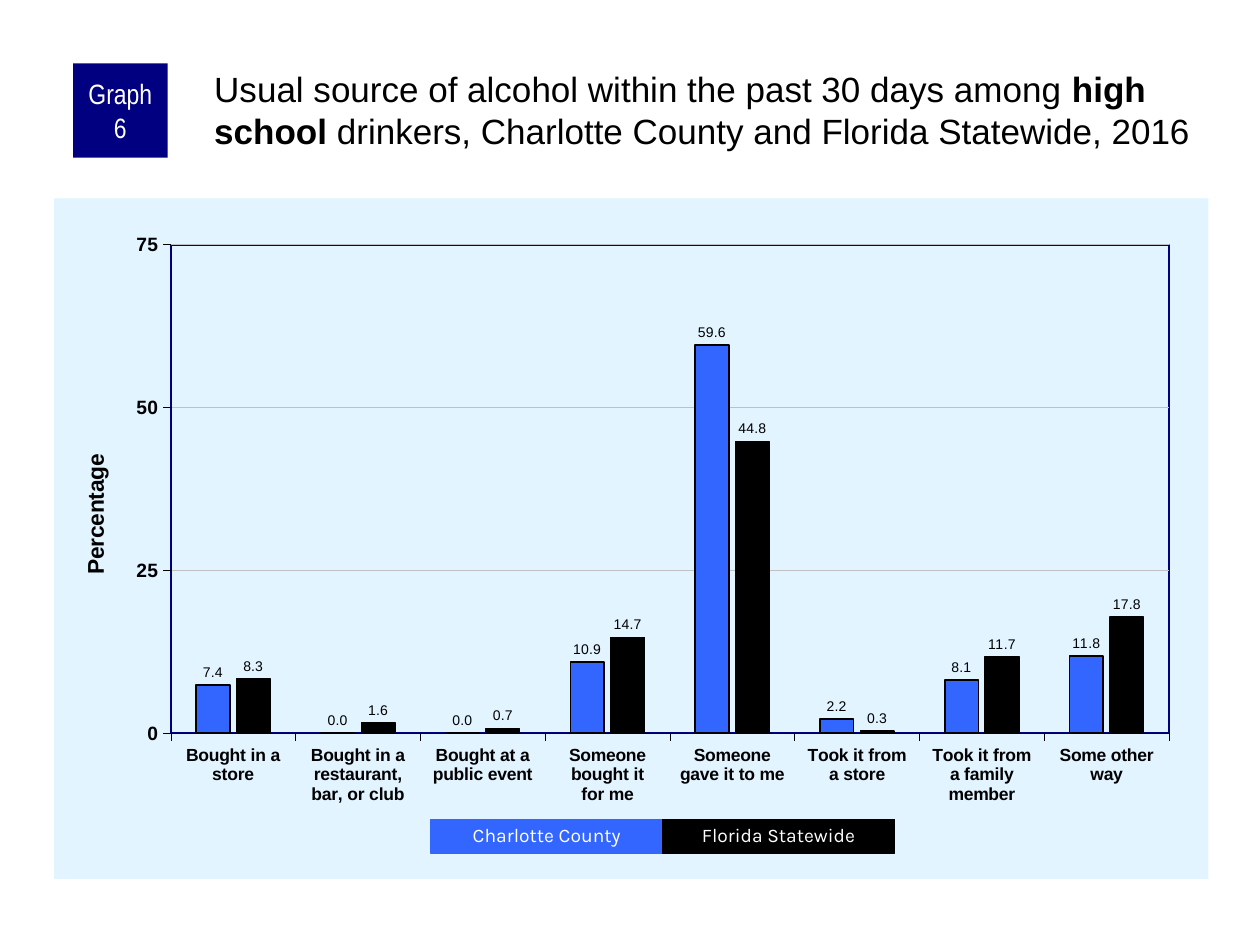
from dataclasses import dataclass
from lxml import etree
from pptx import Presentation
from pptx.chart.data import CategoryChartData
from pptx.dml.color import RGBColor
from pptx.enum.chart import XL_CHART_TYPE, XL_LABEL_POSITION, XL_TICK_MARK
from pptx.enum.shapes import MSO_SHAPE
from pptx.enum.text import MSO_ANCHOR, MSO_AUTO_SIZE, PP_ALIGN
from pptx.oxml import parse_xml
from pptx.util import Inches, Pt

COLUMN = XL_CHART_TYPE.COLUMN_CLUSTERED
OUTER = XL_LABEL_POSITION.OUTSIDE_END
TICK = XL_TICK_MARK.OUTSIDE
RECT = MSO_SHAPE.RECTANGLE
TOP = MSO_ANCHOR.TOP
MIDDLE = MSO_ANCHOR.MIDDLE
FIXED = MSO_AUTO_SIZE.NONE
GROW = MSO_AUTO_SIZE.SHAPE_TO_FIT_TEXT
LEFT = PP_ALIGN.LEFT
CENTER = PP_ALIGN.CENTER
WIDE, HIGH = Inches(10), Inches(7.5)
SPACE = "http://schemas.openxmlformats.org/drawingml/2006/chart"
DRAW = "http://schemas.openxmlformats.org/drawingml/2006/main"


@dataclass(frozen=True)
class Theme:
    body: str = "Arial"
    tight: str = "Arial Narrow"
    key: str = "Karla"
    navy: str = "000080"
    blue: str = "3366FF"
    black: str = "000000"
    white: str = "FFFFFF"
    pale: str = "E1F4FF"
    grid: str = "C0C0C0"
    head: float = 20
    badge: float = 16
    name: float = 13
    base: float = 11.5
    tick: float = 11
    cat: float = 10
    value: float = 8
    label: float = 11


@dataclass(frozen=True)
class Box:
    x: float
    y: float
    w: float
    h: float

    def place(self) -> tuple:
        return (round(self.x * WIDE), round(self.y * HIGH),
                round(self.w * WIDE), round(self.h * HIGH))


@dataclass(frozen=True)
class Group:
    name: str
    color: str
    edge: float
    values: tuple


LOOK = Theme()
GROUPS = (
    Group("Charlotte County", LOOK.blue, 1, (7.4, 0, 0, 10.9, 59.6, 2.2, 8.1, 11.8)),
    Group("Florida Statewide", LOOK.black, 0.75, (8.3, 1.6, 0.7, 14.7, 44.8, 0.3, 11.7, 17.8)),
)
SOURCES = (
    "Bought in a store", "Bought in a restaurant, bar, or club",
    "Bought at a public event", "Someone bought it\nfor me",
    "Someone\ngave it to me", "Took it from\na store",
    "Took it from\na family member", "Some other way",
)
HEAD = (
    ("Usual source of alcohol within the past 30 days among ", False),
    ("high school", True),
    (" drinkers, Charlotte County and Florida Statewide, 2016", False),
)


def apply(item, values: dict) -> None:
    for key, value in values.items():
        setattr(item, key, value)


def style(font, face: str, size: float, color: str, bold: bool = False) -> None:
    apply(font, {"name": face, "size": Pt(size), "bold": bold})
    font.color.rgb = RGBColor.from_string(color)


def stroke(line, color: str, width: float) -> None:
    line.color.rgb = RGBColor.from_string(color)
    line.width = Pt(width)


def block(slide, box: Box, text: str, fill: str, face: str, size: float):
    shape = slide.shapes.add_shape(RECT, *box.place())
    shape.shadow.inherit = False
    shape.fill.solid()
    shape.fill.fore_color.rgb = RGBColor.from_string(fill)
    shape.line.fill.background()
    frame = shape.text_frame
    apply(frame, {"word_wrap": True, "vertical_anchor": MIDDLE})
    part = frame.paragraphs[0]
    part.alignment = CENTER
    run = part.add_run()
    run.text = text
    style(run.font, face, size, LOOK.white)
    return shape


def layout(parent, index: int, values: dict) -> None:
    for old in parent.findall(f"{{{SPACE}}}layout"):
        parent.remove(old)
    node = etree.Element(f"{{{SPACE}}}layout")
    inner = etree.SubElement(node, f"{{{SPACE}}}manualLayout")
    for key, value in values.items():
        etree.SubElement(inner, f"{{{SPACE}}}{key}").set("val", str(value))
    parent.insert(index, node)


def paint(fill: str, line: str):
    return parse_xml(f'<c:spPr xmlns:c="{SPACE}" xmlns:a="{DRAW}">{fill}<a:ln w="12700">{line}</a:ln></c:spPr>')


def solid(color: str) -> str:
    return f'<a:solidFill><a:srgbClr val="{color}"/></a:solidFill>'


def graph(slide, box: Box) -> None:
    data = CategoryChartData(number_format="0.0")
    data.categories = SOURCES
    for group in GROUPS:
        data.add_series(group.name, group.values)
    chart = slide.shapes.add_chart(COLUMN, *box.place(), data).chart
    apply(chart, {"has_legend": False, "has_title": False})
    style(chart.font, LOOK.body, LOOK.base, LOOK.black)
    plot = chart.plots[0]
    apply(plot, {"gap_width": 150, "overlap": -20, "vary_by_categories": False})
    for series, group in zip(plot.series, GROUPS):
        series.format.fill.solid()
        series.format.fill.fore_color.rgb = RGBColor.from_string(group.color)
        stroke(series.format.line, LOOK.black, group.edge)
        labels = series.data_labels
        apply(labels, {"show_value": True, "position": OUTER,
                       "number_format": "0.0", "number_format_is_linked": False})
        style(labels.font, LOOK.body, LOOK.value, LOOK.black)
    rise = chart.value_axis
    for axis, size in ((chart.category_axis, LOOK.cat), (rise, LOOK.tick)):
        axis.major_tick_mark = TICK
        style(axis.tick_labels.font, LOOK.body, size, LOOK.black, True)
        stroke(axis.format.line, LOOK.black, 0.25)
    apply(rise, {"minimum_scale": 0, "maximum_scale": 75, "major_unit": 25})
    apply(rise.tick_labels, {"number_format": "0", "number_format_is_linked": False})
    stroke(rise.major_gridlines.format.line, LOOK.grid, 0.25)
    title = rise.axis_title
    frame = title.text_frame
    frame.text = "Percentage"
    style(frame.paragraphs[0].runs[0].font, LOOK.body, LOOK.name, LOOK.black, True)
    frame._txBody.bodyPr.set("rot", "-5400000")
    layout(title._element, 1, {"xMode": "edge", "yMode": "edge", "x": 0.02, "y": 0.37})
    area = chart._chartSpace.chart.plotArea
    layout(area, 0, {"layoutTarget": "inner", "xMode": "edge", "yMode": "edge",
                     "x": 0.101, "y": 0.068, "w": 0.865, "h": 0.718})
    area.append(paint("<a:noFill/>", solid(LOOK.navy)))
    chart._chartSpace.chart.addnext(paint(solid(LOOK.pale), "<a:noFill/>"))


def heading(slide, box: Box) -> None:
    title = slide.shapes.title
    apply(title, dict(zip(("left", "top", "width", "height"), box.place())))
    frame = title.text_frame
    apply(frame, {"word_wrap": True, "auto_size": FIXED, "vertical_anchor": TOP,
                  "margin_left": Inches(0.03), "margin_top": Inches(0.03),
                  "margin_right": 0, "margin_bottom": 0})
    part = frame.paragraphs[0]
    part.alignment = LEFT
    for text, bold in HEAD:
        run = part.add_run()
        run.text = text
        style(run.font, LOOK.body, LOOK.head, LOOK.black, bold)


def main() -> None:
    deck = Presentation()
    apply(deck, {"slide_width": WIDE, "slide_height": HIGH})
    slide = deck.slides.add_slide(deck.slide_layouts[5])
    graph(slide, Box(0.043, 0.21, 0.916, 0.72))
    badge = block(slide, Box(0.058, 0.067, 0.075, 0.1), "Graph 6",
                  LOOK.navy, LOOK.tight, LOOK.badge)
    apply(badge.text_frame, {"margin_left": Inches(0.05), "margin_right": Inches(0.05),
                             "margin_top": 0, "margin_bottom": 0})
    heading(slide, Box(0.167, 0.067, 0.792, 0.11))
    step = 0.184
    for col, group in enumerate(GROUPS):
        key = block(slide, Box(0.342 + col * step, 0.867, step, 0.036),
                    group.name, group.color, LOOK.key, LOOK.label)
        stroke(key.line, group.color, 0.75)
        key.text_frame.auto_size = GROW
        key.text_frame.paragraphs[0].line_spacing = 0.9
    deck.save("out.pptx")


if __name__ == "__main__":
    main()
